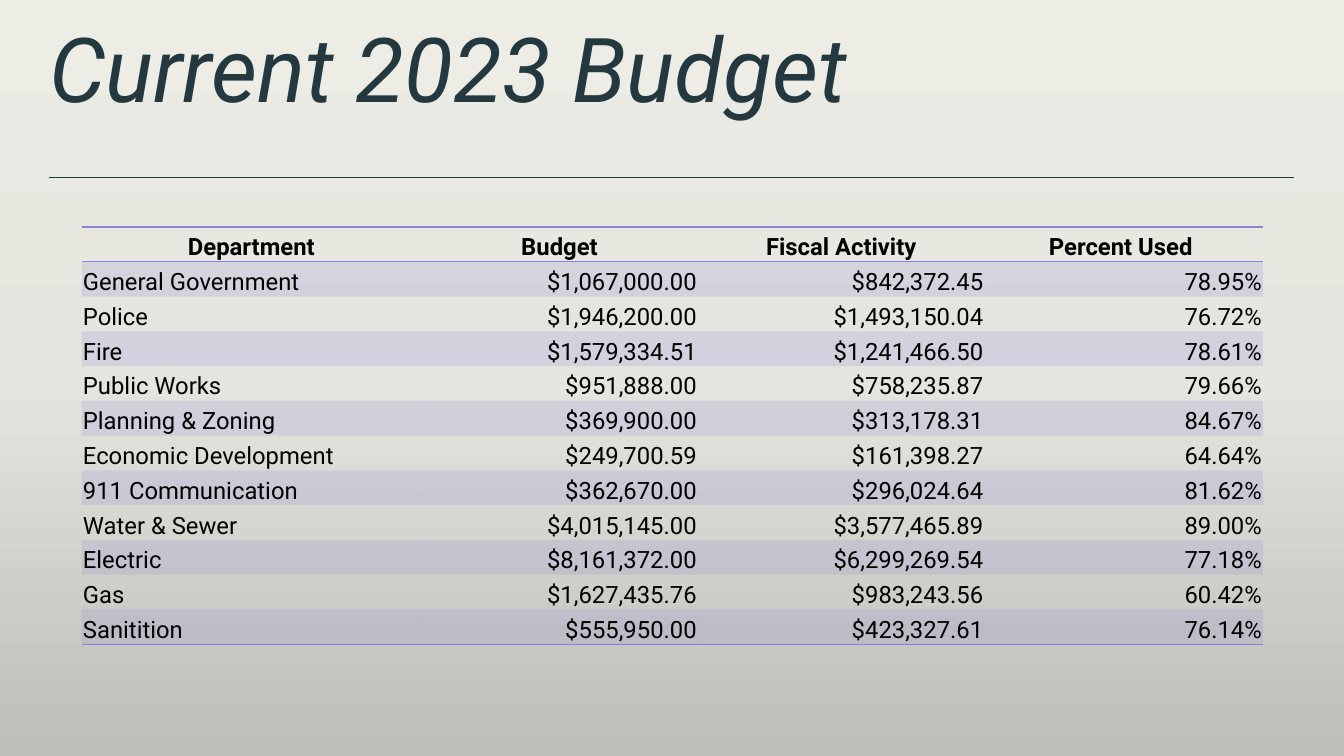
from copy import deepcopy
from typing import NamedTuple

from lxml.etree import SubElement
from pptx import Presentation
from pptx.dml.color import RGBColor
from pptx.enum.shapes import MSO_CONNECTOR
from pptx.enum.text import MSO_VERTICAL_ANCHOR as Anchor, PP_PARAGRAPH_ALIGNMENT as Align
from pptx.oxml.ns import qn
from pptx.slide import Slide
from pptx.table import _Cell as Cell
from pptx.text.text import _Paragraph as Paragraph
from pptx.util import Cm, Pt

FONT = "Roboto"
SLATE = RGBColor(0x24, 0x39, 0x3F)
BLACK = RGBColor(0x00, 0x00, 0x00)
LAVENDER = RGBColor(0x88, 0x85, 0xD7)
BACKDROP = (
    (0.0, RGBColor(0xED, 0xED, 0xE6)),
    (0.5, RGBColor(0xE5, 0xE5, 0xDF)),
    (1.0, RGBColor(0xBE, 0xBE, 0xB8)),
)
PLAIN_TABLE_STYLE = "{2D5ABB26-0587-4C30-8999-92F81FD0307C}"
BAND_ALPHA = 20000
COLUMN_WIDTHS = (8.55, 6.98, 7.22, 7.02)
TABLE_HEIGHT = 10.52


class BudgetLine(NamedTuple):
    department: str
    budget: str
    activity: str
    percent: str


HEADINGS = BudgetLine("Department", "Budget", "Fiscal Activity", "Percent Used ")
BUDGET_LINES = (
    BudgetLine("General Government", "$1,067,000.00", "$842,372.45", "78.95%"),
    BudgetLine("Police", "$1,946,200.00", "$1,493,150.04", "76.72%"),
    BudgetLine("Fire", "$1,579,334.51", "$1,241,466.50", "78.61%"),
    BudgetLine("Public Works", "$951,888.00", "$758,235.87", "79.66%"),
    BudgetLine("Planning & Zoning", "$369,900.00", "$313,178.31", "84.67%"),
    BudgetLine("Economic Development", "$249,700.59", "$161,398.27", "64.64%"),
    BudgetLine("911 Communication", "$362,670.00", "$296,024.64", "81.62%"),
    BudgetLine("Water & Sewer", "$4,015,145.00", "$3,577,465.89", "89.00%"),
    BudgetLine("Electric", "$8,161,372.00", "$6,299,269.54", "77.18%"),
    BudgetLine("Gas", "$1,627,435.76", "$983,243.56", "60.42%"),
    BudgetLine("Sanitition", "$555,950.00", "$423,327.61", "76.14%"),
)


def add_run(paragraph: Paragraph, text: str, size: float, color: RGBColor,
            bold: bool = False, italic: bool = False) -> None:
    run = paragraph.add_run()
    run.text = text
    run.font.name = FONT
    run.font.size = Pt(size)
    run.font.color.rgb = color
    run.font.bold = bold
    run.font.italic = italic


def paint_backdrop(slide: Slide) -> None:
    fill = slide.background.fill
    fill.gradient()
    fill.gradient_angle = 270
    stop_list = slide.element.find(".//" + qn("a:gsLst"))
    stop_list.append(deepcopy(stop_list[0]))
    for stop, (position, color) in zip(fill.gradient_stops, BACKDROP):
        stop.position = position
        stop.color.rgb = color


def add_title(slide: Slide) -> None:
    title = slide.shapes.add_textbox(Cm(1.24), Cm(0.64), Cm(31.4), Cm(2.74))
    frame = title.text_frame
    frame.word_wrap = True
    frame.vertical_anchor = Anchor.TOP
    frame.margin_left = frame.margin_right = frame.margin_top = frame.margin_bottom = 0
    heading = frame.paragraphs[0]
    heading.line_spacing = 0.9
    add_run(heading, "Current 2023 Budget", 64, SLATE, italic=True)


def add_divider(slide: Slide) -> None:
    divider = slide.shapes.add_connector(
        MSO_CONNECTOR.STRAIGHT, Cm(1.24), Cm(4.47), Cm(32.61), Cm(4.47))
    divider.line.color.rgb = SLATE
    divider.line.width = Pt(0.5)
    SubElement(divider.element.spPr, qn("a:effectLst"))


def fill_band(cell: Cell) -> None:
    cell.fill.solid()
    cell.fill.fore_color.rgb = LAVENDER
    color = cell.fill._xPr.find(".//" + qn("a:srgbClr"))
    SubElement(color, qn("a:alpha"), val=str(BAND_ALPHA))


def add_borders(cell: Cell, sides: tuple[str, ...]) -> None:
    properties = cell._tc.get_or_add_tcPr()
    for index, side in enumerate(sides):
        border = SubElement(properties, qn(f"a:ln{side}"), w=str(Pt(1)))
        paint = SubElement(border, qn("a:solidFill"))
        SubElement(paint, qn("a:srgbClr"), val=str(LAVENDER))
        properties.insert(index, border)


def add_budget_table(slide: Slide) -> None:
    lines = (HEADINGS, *BUDGET_LINES)
    last = len(lines) - 1
    budget = slide.shapes.add_table(
        len(lines), len(COLUMN_WIDTHS), Cm(2.06), Cm(5.72),
        Cm(sum(COLUMN_WIDTHS)), Cm(TABLE_HEIGHT)).table
    budget._tbl.tblPr.find(qn("a:tableStyleId")).text = PLAIN_TABLE_STYLE
    for column, width in zip(budget.columns, COLUMN_WIDTHS):
        column.width = Cm(width)
    for row, line in enumerate(lines):
        for column, text in enumerate(line):
            cell = budget.cell(row, column)
            cell.vertical_anchor = Anchor.BOTTOM
            cell.margin_left = cell.margin_right = cell.margin_top = Cm(0.03)
            cell.margin_bottom = 0
            entry = cell.text_frame.paragraphs[0]
            if row == 0:
                entry.alignment = Align.CENTER
            else:
                entry.alignment = Align.RIGHT if column else Align.LEFT
            add_run(entry, text, 17, BLACK, bold=row == 0)
            if row % 2:
                fill_band(cell)
            else:
                cell.fill.background()
            if row == 0:
                add_borders(cell, ("T", "B"))
            elif row == last:
                add_borders(cell, ("B",))


def main() -> None:
    deck = Presentation()
    deck.slide_width, deck.slide_height = Cm(33.87), Cm(19.05)
    slide = deck.slides.add_slide(deck.slide_layouts[6])
    paint_backdrop(slide)
    add_title(slide)
    add_divider(slide)
    add_budget_table(slide)
    deck.save("out.pptx")


if __name__ == "__main__":
    main()
